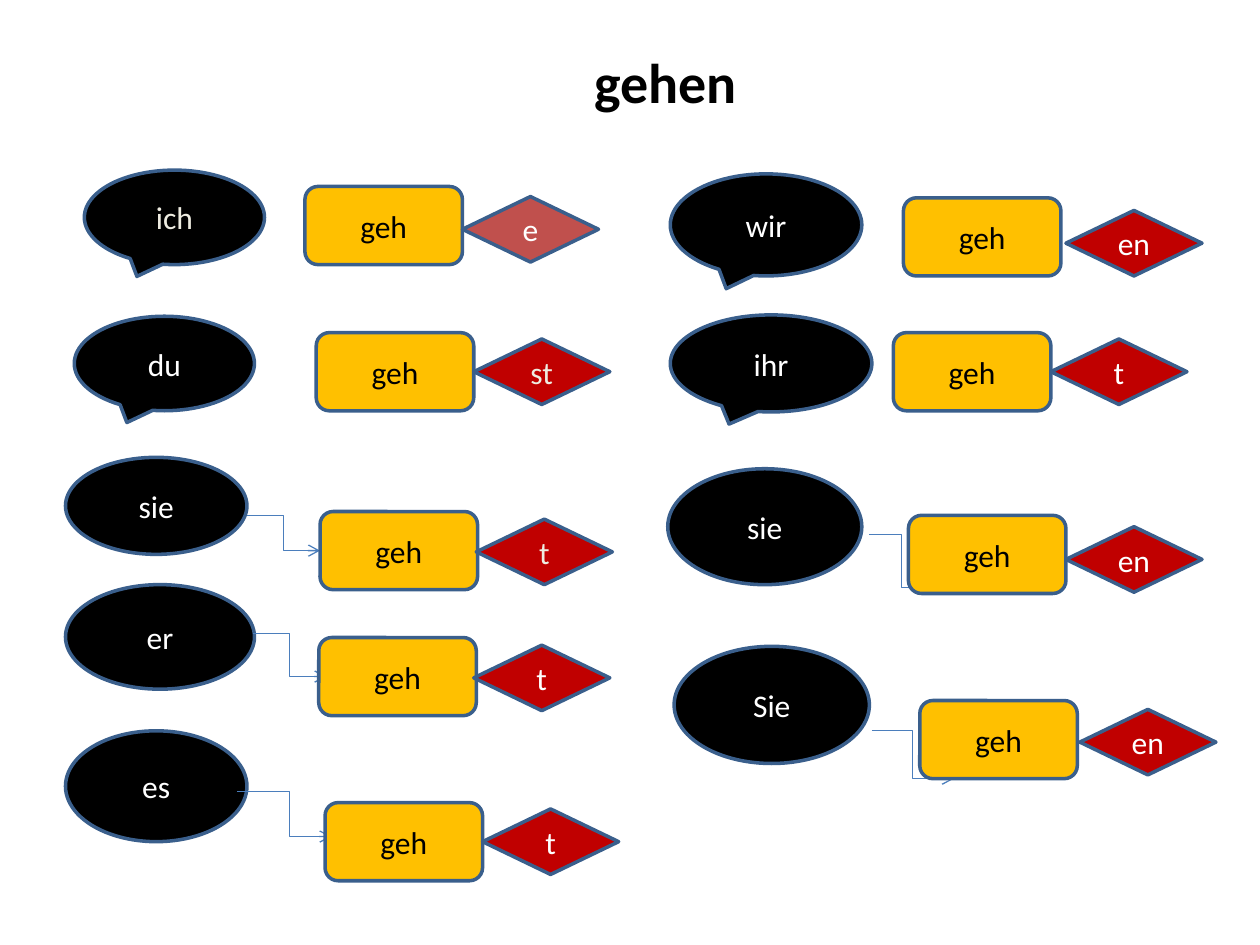
from dataclasses import dataclass

from lxml.etree import SubElement
from pptx import Presentation
from pptx.dml.color import RGBColor
from pptx.enum.shapes import MSO_CONNECTOR as Link, MSO_SHAPE as Shape
from pptx.enum.text import MSO_ANCHOR as Anchor, PP_ALIGN as Align
from pptx.oxml.ns import qn
from pptx.util import Pt

SCALE = 9144  # EMU per px, 100 px to the inch
FONT = "Calibri"
BLACK = RGBColor(0x00, 0x00, 0x00)
WHITE = RGBColor(0xFF, 0xFF, 0xFF)
CREAM = RGBColor(0xEE, 0xEC, 0xE1)
GOLD = RGBColor(0xFF, 0xC0, 0x00)
RED = RGBColor(0xC0, 0x00, 0x00)
ROSE = RGBColor(0xC0, 0x50, 0x4D)
EDGE = RGBColor(0x3A, 0x5F, 0x8C)
BLUE = RGBColor(0x4B, 0x7E, 0xBC)


@dataclass
class Row:
    """One form of the verb; stem and wire are offsets from box, tip from stem."""
    word: str
    box: tuple
    stem: tuple
    end: str
    tip: tuple = (125, 5)
    wire: tuple = None
    bend: float = 0.5
    ink: RGBColor = WHITE
    end_ink: RGBColor = WHITE
    end_fill: RGBColor = RED


ROWS = [
    Row("ich", (67, 135, 143, 75), (175, 13), "e", (125, 8), ink=CREAM, end_fill=ROSE),
    Row("du", (59, 251, 143, 75), (192, 13), "st", end_ink=CREAM),
    Row("sie", (52, 363, 144, 77), (202, 43), "t", (124, 6), (144, 46, 58, 28), end_ink=CREAM),
    Row("er", (52, 464, 150, 83), (201, 42), "t", (123, 6), (149, 39, 58, 34)),
    Row("es", (52, 580, 144, 88), (206, 57), "t", wire=(136, 48, 75, 36), bend=0.56),
    Row("wir", (532, 138, 152, 81), (185, 19), "en", (129, 10)),
    Row("ihr", (532, 250, 160, 77), (177, 14), "t"),
    Row("sie", (530, 372, 154, 92), (191, 37), "en", (125, 9), (160, 52, 51, 42)),
    Row("Sie", (535, 513, 155, 93), (195, 43), "en", (127, 7), (157, 67, 65, 38)),
]


def px(*sizes):
    return [size * SCALE for size in sizes]


def set_text(frame, text, size, color, bold=False):
    frame.word_wrap = True
    par = frame.paragraphs[0]
    par.text = text
    par.alignment = Align.CENTER
    font = par.font
    font.name, font.size, font.bold = FONT, Pt(size), bold
    font.color.rgb = color


def add_part(slide, kind, box, text, fill, ink):
    part = slide.shapes.add_shape(kind, *px(*box))
    part.shadow.inherit = False
    part.fill.solid()
    part.fill.fore_color.rgb = fill
    part.line.color.rgb = EDGE
    part.line.width = Pt(2)
    part.text_frame.vertical_anchor = Anchor.MIDDLE
    set_text(part.text_frame, text, 18, ink)


def add_wire(slide, box, bend):
    left, top, width, height = box
    wire = slide.shapes.add_connector(
        Link.ELBOW, *px(left, top, left + width, top + height))
    wire.line.color.rgb = BLUE
    wire.line.width = Pt(0.75)
    SubElement(wire.line._get_or_add_ln(), qn("a:tailEnd"), type="arrow")
    props = wire._element.spPr
    SubElement(props, qn("a:effectLst"))
    guides = props.find(qn("a:prstGeom")).get_or_add_avLst()
    SubElement(guides, qn("a:gd"), name="adj1", fmla=f"val {round(bend * 100000)}")


def add_row(slide, row):
    left, top, _, _ = row.box
    kind = Shape.OVAL if row.wire else Shape.OVAL_CALLOUT
    add_part(slide, kind, row.box, row.word, BLACK, row.ink)
    if row.wire:
        x, y, width, height = row.wire
        add_wire(slide, (left + x, top + y, width, height), row.bend)
    x, y = left + row.stem[0], top + row.stem[1]
    add_part(slide, Shape.ROUNDED_RECTANGLE, (x, y, 125, 62), "geh", GOLD, BLACK)
    tip = (x + row.tip[0], y + row.tip[1], 108, 52)
    add_part(slide, Shape.FLOWCHART_DECISION, tip, row.end, row.end_fill, row.end_ink)


def add_title(slide, box):
    title = slide.shapes.add_textbox(*px(*box))
    set_text(title.text_frame, "gehen", 32, BLACK, bold=True)


def main():
    deck = Presentation()
    deck.slide_width, deck.slide_height = px(1000, 750)
    slide = deck.slides.add_slide(deck.slide_layouts[6])
    add_title(slide, (306, 33, 445, 64))
    for row in ROWS:
        add_row(slide, row)
    deck.save("out.pptx")


if __name__ == "__main__":
    main()
